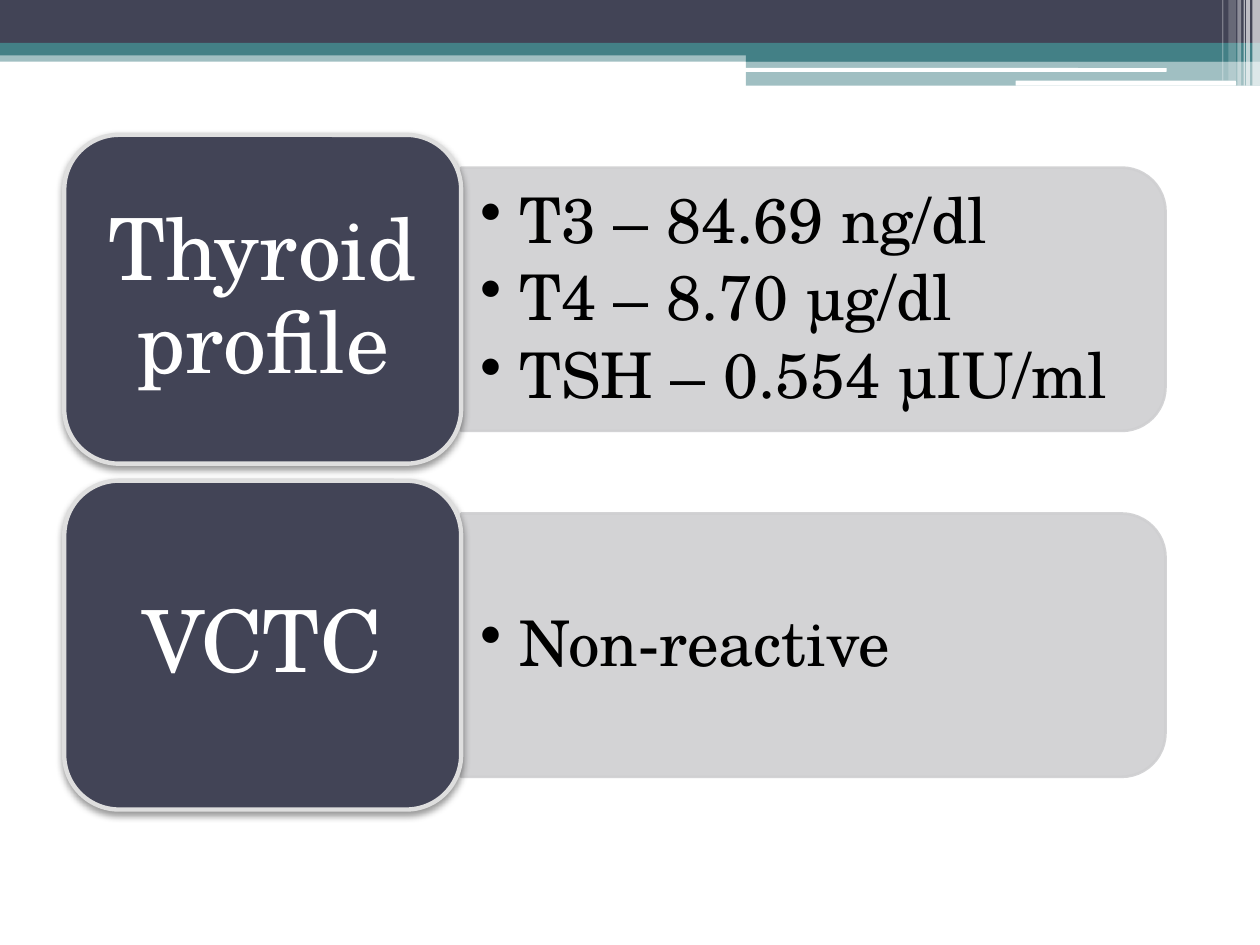
"""Build the thyroid profile and VCTC results slide."""
from typing import NamedTuple

import lxml.etree
import pptx
import pptx.dml.color
import pptx.enum.shapes
import pptx.enum.text
import pptx.oxml
import pptx.oxml.ns
import pptx.util

Inches = pptx.util.Inches
Pt = pptx.util.Pt
RGBColor = pptx.dml.color.RGBColor
Kind = pptx.enum.shapes.MSO_SHAPE
Align = pptx.enum.text.PP_ALIGN
Anchor = pptx.enum.text.MSO_ANCHOR
qn = pptx.oxml.ns.qn

NAVY = RGBColor(0x42, 0x44, 0x56)
TEAL = RGBColor(0x43, 0x80, 0x86)
WHITE = RGBColor(0xFF, 0xFF, 0xFF)
BLACK = RGBColor(0, 0, 0)
GRAY = RGBColor(0xCF, 0xCF, 0xD1)
PALE = RGBColor(0xDE, 0xDE, 0xDE)
FACE = "TeX Gyre Schola"


class Bar(NamedTuple):
    left: float
    top: float
    width: float
    height: float
    color: RGBColor
    alpha: int = 100
    kind: Kind = Kind.RECTANGLE


class Row(NamedTuple):
    label: str
    items: tuple[str, ...]


BARS = (
    Bar(0, 0.4, 10, 0.09, TEAL, 50),
    Bar(0, 0, 10, 0.34, NAVY),
    Bar(0, 0.34, 10, 0.1, TEAL),
    Bar(5.92, 0.39, 4.08, 0.1, TEAL),
    Bar(5.92, 0.48, 4.08, 0.2, TEAL, 50),
    Bar(5.91, 0.54, 3.35, 0.03, WHITE, kind=Kind.ROUNDED_RECTANGLE),
    Bar(8.06, 0.64, 1.75, 0.04, WHITE, kind=Kind.ROUNDED_RECTANGLE),
    Bar(9.94, 0, 0.06, 0.68, WHITE, 65),
    Bar(9.89, 0, 0.03, 0.68, WHITE, 65),
    Bar(9.87, 0, 0.01, 0.68, WHITE, 60),
    Bar(9.82, 0, 0.03, 0.68, WHITE, 40),
    Bar(9.75, 0, 0.06, 0.64, WHITE, 20),
    Bar(9.7, 0, 0.01, 0.64, WHITE, 30),
)
ROWS = (
    Row("Thyroid profile",
        ("T3 – 84.69 ng/dl", "T4 – 8.70 µg/dl", "TSH – 0.554 µIU/ml")),
    Row("VCTC", ("Non-reactive",)),
)
TOP, STEP = 1.07, 2.745


def fade(shape, alpha: int) -> None:
    """Set the opacity of every solid colour in a shape, in percent."""
    for color in shape.element.spPr.iter(qn("a:srgbClr")):
        lxml.etree.SubElement(color, qn("a:alpha"), val=str(alpha * 1000))


def draw(slide, bar: Bar, line: RGBColor | None = None, width: float = 0):
    """Draw one filled shape."""
    place = map(Inches, bar[:4])
    shape = slide.shapes.add_shape(bar.kind, *place)
    shape.shadow.inherit = False
    shape.fill.solid()
    shape.fill.fore_color.rgb = bar.color
    if line is None:
        shape.line.fill.background()
    else:
        shape.line.color.rgb = line
        shape.line.width = Pt(width)
    if bar.alpha < 100:
        fade(shape, bar.alpha)
    return shape


def drop(shape) -> None:
    """Give a shape a soft shadow below it."""
    effects = shape.element.spPr.find(qn("a:effectLst"))
    effects.append(pptx.oxml.parse_xml(
        f'<a:outerShdw {pptx.oxml.ns.nsdecls("a")} blurRad="{Pt(4.1)}" '
        f'dist="{Pt(2)}" dir="5400000" rotWithShape="0">'
        '<a:srgbClr val="000000"><a:alpha val="40000"/></a:srgbClr>'
        '</a:outerShdw>'))


def setup(frame, side: float, edge: float) -> None:
    """Wrap and centre a text frame vertically within its insets."""
    frame.word_wrap = True
    frame.vertical_anchor = Anchor.MIDDLE
    frame.margin_left = frame.margin_right = Inches(side)
    frame.margin_top = frame.margin_bottom = Inches(edge)


def style(par, size: float, color: RGBColor, after: float) -> None:
    """Format one paragraph."""
    par.line_spacing = 0.9
    par.space_after = Pt(size * after)
    par.font.size = Pt(size)
    par.font.name = FACE
    par.font.color.rgb = color


def bullet(par) -> None:
    """Hang a paragraph from a round bullet."""
    props = par._p.get_or_add_pPr()
    props.set("marL", str(Inches(0.31)))
    props.set("indent", str(-Inches(0.31)))
    lxml.etree.SubElement(props, qn("a:buChar"), char="•")


def panel(slide, row: Row, top: float) -> None:
    """Draw a result panel with its label card on top."""
    back = Bar(5.41, top - 1.49, 2.09, 5.59, GRAY, 90,
               Kind.ROUND_2_SAME_RECTANGLE)
    draw(slide, back, GRAY, 1.5).rotation = 90

    place = map(Inches, (3.66, top + 0.37, 5.49, 1.89))
    frame = slide.shapes.add_textbox(*place).text_frame
    setup(frame, 0.15, 0.07)
    frame.text = "\n".join(row.items)
    for par in frame.paragraphs:
        par.level = 1
        bullet(par)
        style(par, 36, BLACK, 0.15)

    front = Bar(0.51, top, 3.15, 2.61, NAVY, kind=Kind.ROUNDED_RECTANGLE)
    card = draw(slide, front, PALE, 2.5)
    drop(card)
    frame = card.text_frame
    setup(frame, 0.2, 0.1)
    frame.text = row.label
    par = frame.paragraphs[0]
    par.alignment = Align.CENTER
    style(par, 49, WHITE, 0.35)


def main() -> None:
    """Build and save the slide."""
    deck = pptx.Presentation()
    deck.slide_width, deck.slide_height = Inches(10), Inches(7.5)
    slide = deck.slides.add_slide(deck.slide_layouts[6])
    for bar in BARS:
        draw(slide, bar)
    for index, row in enumerate(ROWS):
        panel(slide, row, TOP + index * STEP)
    deck.save("out.pptx")


if __name__ == "__main__":
    main()
